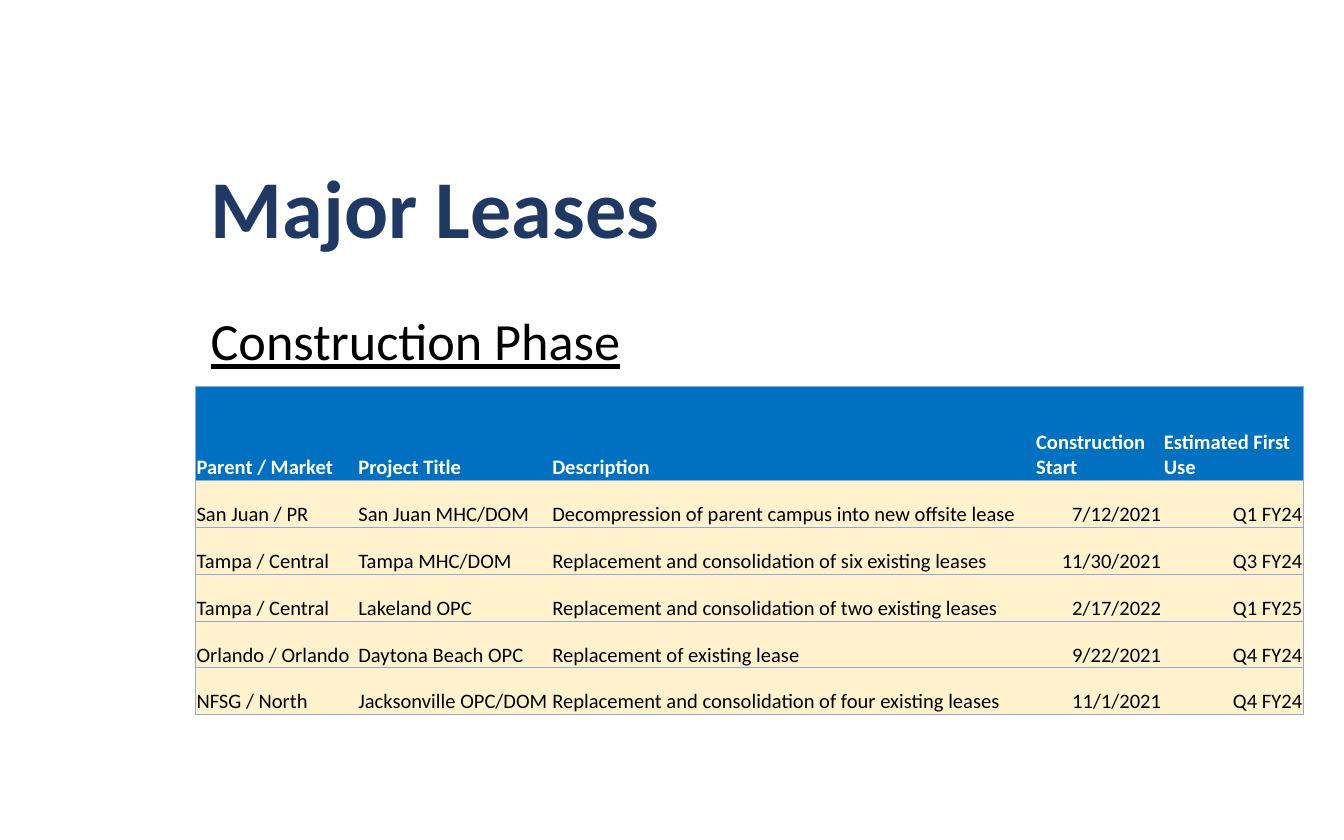
import pptx
import pptx.dml.color
import pptx.enum.text
import pptx.oxml
import pptx.oxml.ns
import pptx.util

Pt = pptx.util.Pt
Anchor = pptx.enum.text.MSO_ANCHOR
Align = pptx.enum.text.PP_ALIGN

NAVY = "203864"
BLUE = "0070C0"
CREAM = "FFF2CC"
RULE = "8EA9DB"
BLACK = "000000"
WHITE = "FFFFFF"

COLUMN_WIDTHS = [86.7, 103.9, 259.2, 68.4, 75.6]
HEADER_HEIGHT = 50.2
LEASE_HEIGHT = 25.1
FIRST_RIGHT_ALIGNED = 3
LEASES = [
    ["Parent / Market", "Project Title", "Description",
     "Construction Start", "Estimated First Use"],
    ["San Juan / PR", "San Juan MHC/DOM",
     "Decompression of parent campus into new offsite lease",
     "7/12/2021", "Q1 FY24"],
    ["Tampa / Central", "Tampa MHC/DOM",
     "Replacement and consolidation of six existing leases",
     "11/30/2021", "Q3 FY24"],
    ["Tampa / Central", "Lakeland OPC",
     "Replacement and consolidation of two existing leases",
     "2/17/2022", "Q1 FY25"],
    ["Orlando / Orlando", "Daytona Beach OPC",
     "Replacement of existing lease",
     "9/22/2021", "Q4 FY24"],
    ["NFSG / North", "Jacksonville OPC/DOM",
     "Replacement and consolidation of four existing leases",
     "11/1/2021", "Q4 FY24"],
]


def rgb(value):
    return pptx.dml.color.RGBColor.from_string(value)


def write(frame, text, size, color, bold=False, underline=False, align=Align.LEFT):
    paragraph = frame.paragraphs[0]
    paragraph.alignment = align
    run = paragraph.add_run()
    run.text = text
    run.font.name = "Calibri"
    run.font.size = Pt(size)
    run.font.bold = bold
    run.font.underline = underline
    run.font.color.rgb = rgb(color)
    return paragraph


def add_title(slide, text):
    title = slide.shapes.title
    title.left, title.top = Pt(105.8), Pt(69.8)
    title.width, title.height = Pt(565.2), Pt(87)
    title.text_frame.vertical_anchor = Anchor.MIDDLE
    write(title.text_frame, text, 44, NAVY, bold=True).line_spacing = 0.9


def add_phase(slide, text):
    phase = slide.shapes.add_textbox(Pt(105.8), Pt(165.6), Pt(565.2), Pt(216.7))
    phase.text_frame.word_wrap = True
    write(phase.text_frame, text, 28, BLACK, underline=True).line_spacing = 0.9


def set_borders(cell, visible_sides):
    properties = cell._tc.get_or_add_tcPr()
    for side in "LRTB":
        if side in visible_sides:
            paint = f'<a:solidFill><a:srgbClr val="{RULE}"/></a:solidFill>'
        else:
            paint = "<a:noFill/>"
        properties.append(pptx.oxml.parse_xml(
            f'<a:ln{side} {pptx.oxml.ns.nsdecls("a")} w="{int(Pt(0.5))}">'
            f"{paint}</a:ln{side}>"))


def format_cell(cell, text, is_header, align, visible_sides):
    set_borders(cell, visible_sides)
    cell.fill.solid()
    cell.fill.fore_color.rgb = rgb(BLUE if is_header else CREAM)
    cell.vertical_anchor = Anchor.BOTTOM
    cell.margin_left = cell.margin_right = cell.margin_top = Pt(0.7)
    cell.margin_bottom = Pt(0)
    write(cell.text_frame, text, 11, WHITE if is_header else BLACK,
          bold=is_header, align=align)


def add_lease_table(slide, leases):
    height = HEADER_HEIGHT + LEASE_HEIGHT * (len(leases) - 1)
    table = slide.shapes.add_table(
        len(leases), len(COLUMN_WIDTHS), Pt(104.6), Pt(207.2),
        Pt(sum(COLUMN_WIDTHS)), Pt(height)).table
    table.first_row = False
    table.horz_banding = False
    for column, width in zip(table.columns, COLUMN_WIDTHS):
        column.width = Pt(width)
    last = len(COLUMN_WIDTHS) - 1
    for row_index, lease in enumerate(leases):
        is_header = row_index == 0
        table.rows[row_index].height = Pt(HEADER_HEIGHT if is_header else LEASE_HEIGHT)
        for column_index, text in enumerate(lease):
            to_right = not is_header and column_index >= FIRST_RIGHT_ALIGNED
            sides = "TB" + {0: "L", last: "R"}.get(column_index, "")
            format_cell(table.cell(row_index, column_index), text, is_header,
                        Align.RIGHT if to_right else Align.LEFT, sides)


def main():
    presentation = pptx.Presentation()
    presentation.slide_width, presentation.slide_height = Pt(720), Pt(450)
    slide = presentation.slides.add_slide(presentation.slide_layouts[5])
    add_title(slide, "Major Leases")
    add_phase(slide, "Construction Phase")
    add_lease_table(slide, LEASES)
    presentation.save("out.pptx")


if __name__ == "__main__":
    main()
